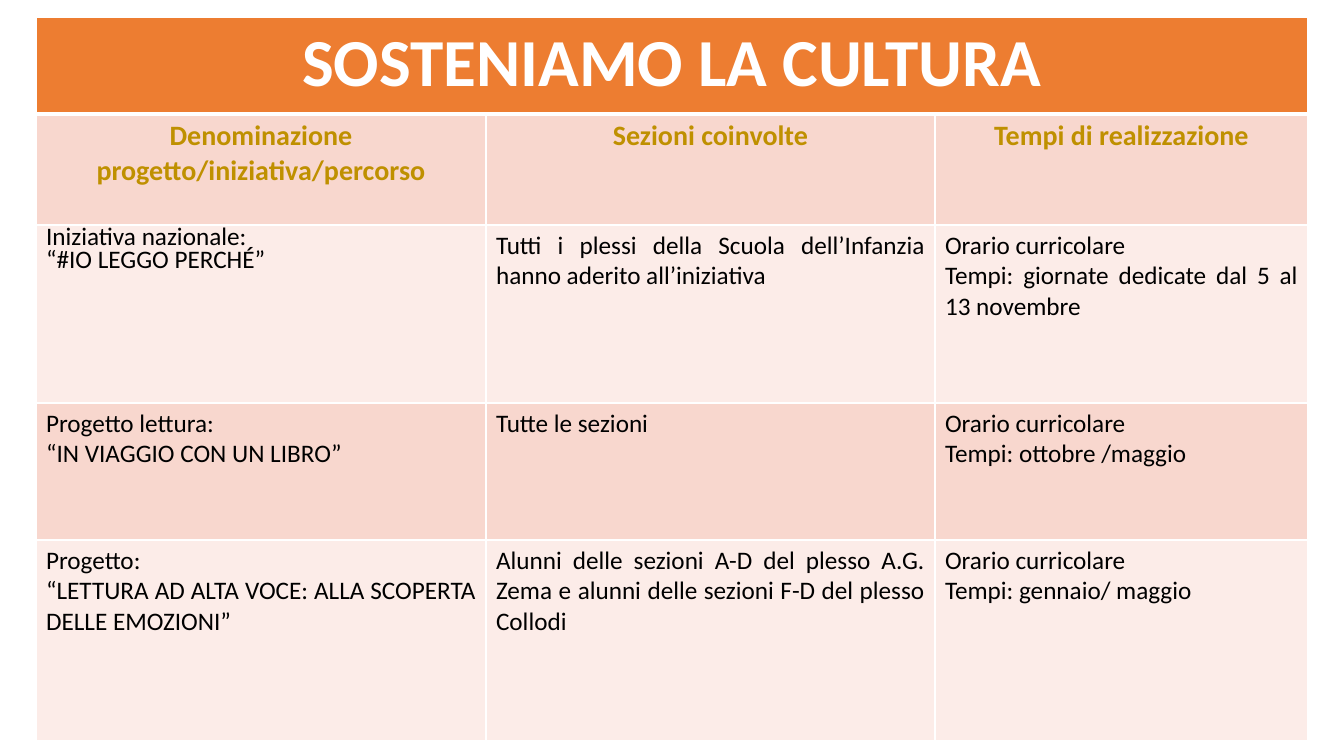
from lxml.etree import SubElement
from pptx import Presentation
from pptx.dml.color import RGBColor
from pptx.enum.text import PP_ALIGN
from pptx.oxml.ns import qn
from pptx.util import Pt

COLORS = {"title": "ED7D31", "dark": "F8D7CE", "light": "FCECE8",
          "gold": "BF9000", "white": "FFFFFF", "black": "000000"}
SCALE = 914400 / 100.8
COLS = [450, 449, 373]
ROWS = [97, 111, 178, 137, 201]
HEADERS = ["Denominazione progetto/iniziativa/percorso", "Sezioni coinvolte",
           "Tempi di realizzazione"]
PROJECTS = [
    ["Iniziativa nazionale:\n“#IO LEGGO PERCHÉ”",
     "Tutti i plessi della Scuola dell’Infanzia hanno aderito all’iniziativa",
     "Orario curricolare\nTempi: giornate dedicate dal 5 al 13 novembre"],
    ["Progetto lettura:\n“IN VIAGGIO CON UN LIBRO”",
     "Tutte le sezioni",
     "Orario curricolare\nTempi: ottobre /maggio"],
    ["Progetto:\n“LETTURA AD ALTA VOCE: ALLA SCOPERTA DELLE EMOZIONI”",
     "Alunni delle sezioni A-D del plesso A.G. Zema e alunni delle sezioni F-D "
     "del plesso Collodi",
     "Orario curricolare\nTempi: gennaio/ maggio"],
]


def px(n):
    return round(n * SCALE)


def rgb(name):
    return RGBColor.from_string(COLORS[name])


def write(tf, text, size=18, color="black", bold=False,
          align=PP_ALIGN.JUSTIFY, spacing=None, font="Calibri"):
    for i, line in enumerate(text.split("\n")):
        p = tf.add_paragraph() if i else tf.paragraphs[0]
        p.alignment = align
        if spacing:
            p.line_spacing = Pt(spacing)
        r = p.add_run()
        r.text = line
        r.font.name = font
        r.font.size = Pt(size)
        r.font.bold = bold
        r.font.color.rgb = rgb(color)


class Deck:
    def __init__(self, width, height):
        self.prs = Presentation()
        self.prs.slide_width, self.prs.slide_height = px(width), px(height)
        self.s = self.prs.slides.add_slide(self.prs.slide_layouts[6])

    def table(self, x, y, cols, rows):
        sp = self.s.shapes.add_table(len(rows), len(cols), px(x), px(y),
                                     px(sum(cols)), px(sum(rows)))
        for col, width in zip(sp.table.columns, cols):
            col.width = px(width)
        for row, height in zip(sp.table.rows, rows):
            row.height = px(height)
        return sp.table

    def cell(self, cell, fill, top=1, bottom=1):
        tcPr = cell._tc.get_or_add_tcPr()
        for side, width in zip("LRTB", (1, 1, top, bottom)):
            ln = SubElement(tcPr, qn(f"a:ln{side}"), w=str(Pt(width)))
            solid = SubElement(ln, qn("a:solidFill"))
            SubElement(solid, qn("a:srgbClr"), val=COLORS["white"])
        cell.fill.solid()
        cell.fill.fore_color.rgb = rgb(fill)


def main():
    deck = Deck(1344, 756)
    table = deck.table(36, 17, COLS, ROWS)
    table.cell(0, 0).merge(table.cell(0, 2))
    for c in range(len(COLS)):
        deck.cell(table.cell(0, c), "title", bottom=3)
    write(table.cell(0, 0).text_frame, "SOSTENIAMO LA CULTURA", size=48,
          color="white", bold=True, align=PP_ALIGN.CENTER)

    for c, header in enumerate(HEADERS):
        cell = table.cell(1, c)
        deck.cell(cell, "dark", top=3)
        write(cell.text_frame, header, size=20, color="gold", bold=True,
              align=PP_ALIGN.CENTER)

    for i, project in enumerate(PROJECTS, 2):
        for c, text in enumerate(project):
            cell = table.cell(i, c)
            deck.cell(cell, "dark" if i % 2 else "light")
            write(cell.text_frame, text,
                  spacing=16 if (i, c) == (2, 0) else None)

    deck.prs.save("out.pptx")


if __name__ == "__main__":
    main()
